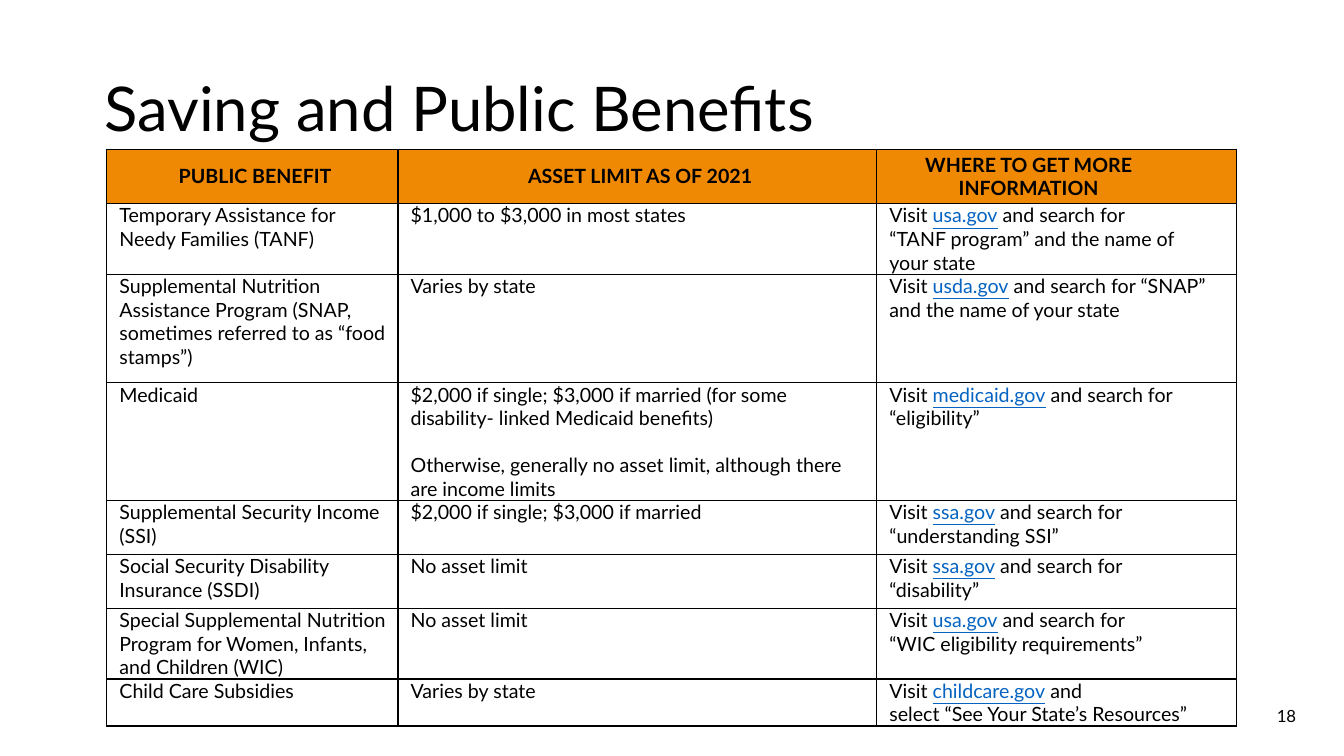
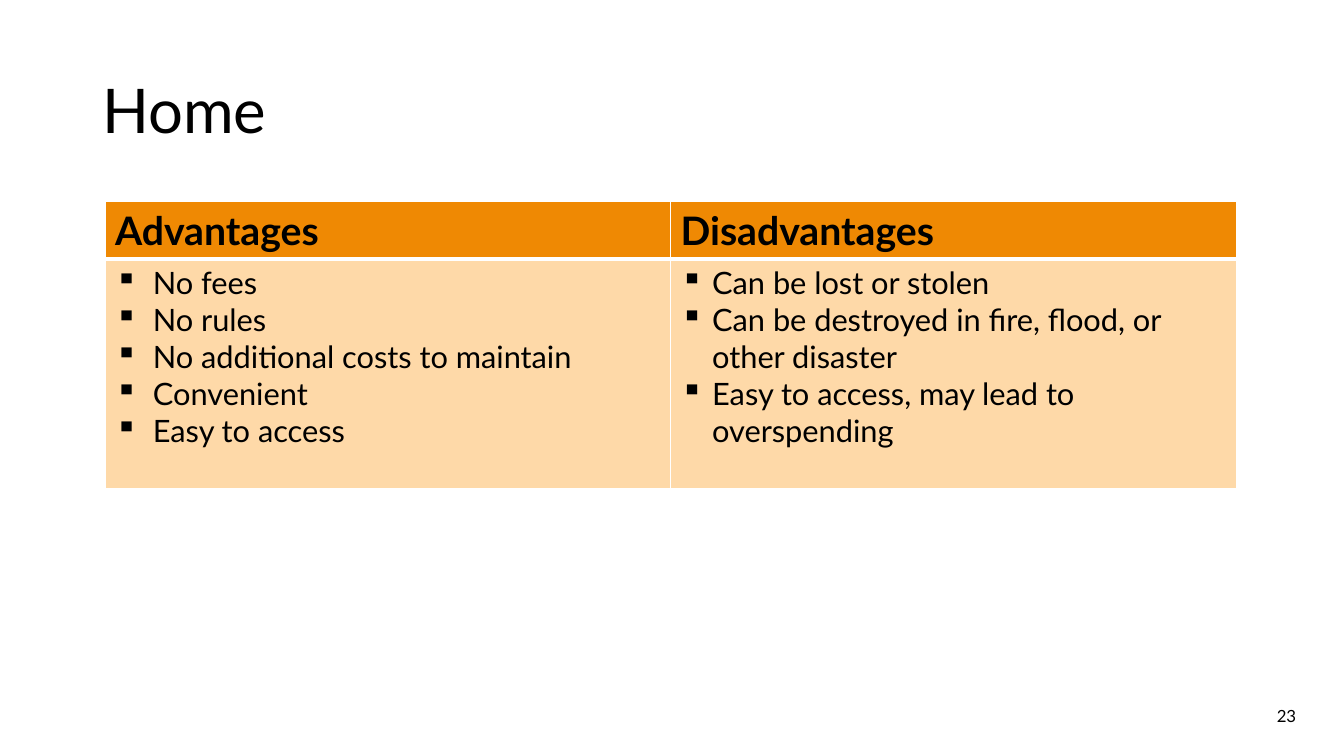
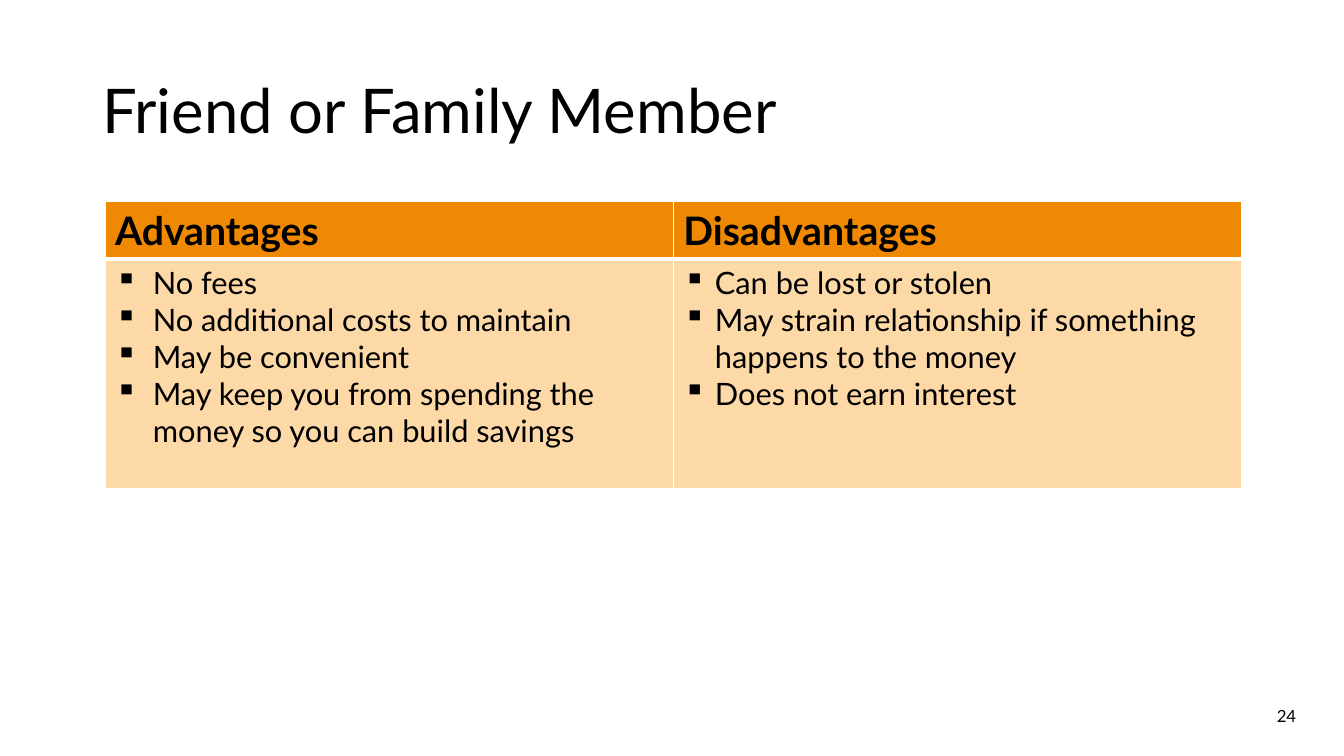
from lxml import etree
from pptx import Presentation
from pptx.dml.color import RGBColor
from pptx.enum.text import MSO_ANCHOR, PP_ALIGN
from pptx.oxml.ns import qn
from pptx.util import Pt

LEFT, CENTER, RIGHT = PP_ALIGN.LEFT, PP_ALIGN.CENTER, PP_ALIGN.RIGHT
TOP, MIDDLE = MSO_ANCHOR.TOP, MSO_ANCHOR.MIDDLE

FONT = "Lato"
COLORS = {
    "text": "000000",
    "link": "0563C1",
    "header": "EF8903",
    "body": "FED9A8",
    "rule": "000000",
    "gap": "FFFFFF",
}

BENEFIT_TITLE = "Saving and Public Benefits"
BENEFIT_HEADERS = ["PUBLIC BENEFIT", "ASSET LIMIT AS OF 2021", "WHERE TO GET MORE INFORMATION"]
BENEFITS = [
    ("Temporary Assistance for Needy Families (TANF)",
     ["$1,000 to $3,000 in most states"],
     "usa.gov", " and search for\n“TANF program” and the name of your state"),
    ("Supplemental Nutrition Assistance Program (SNAP, sometimes referred to as “food stamps”)",
     ["Varies by state"],
     "usda.gov", " and search for “SNAP” and the name of your state"),
    ("Medicaid",
     ["$2,000 if single; $3,000 if married (for some disability- linked Medicaid benefits)",
      "Otherwise, generally no asset limit, although there are income limits"],
     "medicaid.gov", " and search for “eligibility”"),
    ("Supplemental Security Income (SSI)",
     ["$2,000 if single; $3,000 if married"],
     "ssa.gov", " and search for “understanding SSI”"),
    ("Social Security Disability Insurance (SSDI)",
     ["No asset limit"],
     "ssa.gov", " and search for “disability”"),
    ("Special Supplemental Nutrition Program for Women, Infants, and Children (WIC)",
     ["No asset limit"],
     "usa.gov", " and search for\n“WIC eligibility requirements”"),
    ("Child Care Subsidies",
     ["Varies by state"],
     "childcare.gov", " and\nselect “See Your State’s Resources”"),
]
BENEFIT_COLUMNS = [208, 342, 257]
BENEFIT_ROWS = [39, 50, 77.5, 84, 38.5, 38.5, 50.4, 33.6]
BENEFIT_INSETS = (9, 0, 5, 0)
INFO_RIGHT_INSETS = {0: 49, 1: 30, 5: 30}

COMPARISON_HEADERS = ["Advantages", "Disadvantages"]
COMPARISON_ROWS = [41, 164]
COMPARISON_INSETS = (7.2, 3.6, 7.2, 3.6)
BULLET_INDENTS = [27, 22.5]
COMPARISONS = [
    {"title": "Home", "number": 23, "column": 404, "lists": [
        ["No fees", "No rules", "No additional costs to maintain", "Convenient",
         "Easy to access"],
        ["Can be lost or stolen", "Can be destroyed in fire, flood, or other disaster",
         "Easy to access, may lead to overspending"],
    ]},
    {"title": "Friend or Family Member", "number": 24, "column": 406, "lists": [
        ["No fees", "No additional costs to maintain", "May be convenient",
         "May keep you from spending the money so you can build savings"],
        ["Can be lost or stolen", "May strain relationship if something happens to the money",
         "Does not earn interest"],
    ]},
]


def rgb(name):
    return RGBColor.from_string(COLORS[name])


def style(paragraph, size, bold=False, align=LEFT):
    paragraph.alignment = align
    font = paragraph.font
    font.name, font.size, font.bold = FONT, Pt(size), bold
    font.color.rgb = rgb("text")


def add_bullet(paragraph, indent):
    properties = paragraph._p.get_or_add_pPr()
    properties.set("marL", str(Pt(indent)))
    properties.set("indent", str(-Pt(indent)))
    etree.SubElement(properties, qn("a:buChar")).set("char", "▪")


def add_label(page, text, left, top, width, height, size, align=LEFT):
    box = page.shapes.add_textbox(Pt(left), Pt(top), Pt(width), Pt(height))
    frame = box.text_frame
    frame.word_wrap = True
    frame.vertical_anchor = MIDDLE
    paragraph = frame.paragraphs[0]
    paragraph.text = text
    style(paragraph, size, align=align)
    return paragraph


def add_page(deck, title, number, title_left=66, title_top=29):
    page = deck.slides.add_slide(deck.slide_layouts[6])
    heading = add_label(page, title, title_left, title_top, 828, 104.4, 44)
    heading.line_spacing = 0.9
    add_label(page, str(number), 678, 493, 255, 36, 12, RIGHT)
    return page


def add_grid(page, left, top, columns, rows):
    frame = page.shapes.add_table(len(rows), len(columns), Pt(left), Pt(top),
                                  Pt(sum(columns)), Pt(sum(rows)))
    table = frame.table
    table.first_row = table.horz_banding = False
    for column, width in zip(table.columns, columns):
        column.width = Pt(width)
    for row, height in zip(table.rows, rows):
        row.height = Pt(height)
    return table


def format_cell(cell, insets, fill, line, anchor=TOP, top_line=1, bottom_line=1):
    cell.margin_left, cell.margin_top, cell.margin_right, cell.margin_bottom = map(Pt, insets)
    cell.vertical_anchor = anchor
    if fill:
        cell.fill.solid()
        cell.fill.fore_color.rgb = rgb(fill)
    else:
        cell.fill.background()
    properties = cell._tc.get_or_add_tcPr()
    widths = {"a:lnL": 1, "a:lnR": 1, "a:lnT": top_line, "a:lnB": bottom_line}
    for position, (tag, width) in enumerate(widths.items()):
        border = etree.Element(qn(tag), w=str(Pt(width)))
        solid = etree.SubElement(border, qn("a:solidFill"))
        etree.SubElement(solid, qn("a:srgbClr")).set("val", COLORS[line])
        properties.insert(position, border)


def write_lines(cell, lines, size, bold=False, align=LEFT, gap=0, indent=None):
    frame = cell.text_frame
    for index, line in enumerate(lines):
        paragraph = frame.add_paragraph() if index else frame.paragraphs[0]
        paragraph.text = line
        if index and gap:
            paragraph.space_before = Pt(gap)
        if indent:
            add_bullet(paragraph, indent)
        style(paragraph, size, bold, align)


def write_link(cell, address, rest):
    paragraph = cell.text_frame.paragraphs[0]
    style(paragraph, 14)
    paragraph.add_run().text = "Visit "
    link = paragraph.add_run()
    link.text = address
    link.font.underline = True
    link.font.color.rgb = rgb("link")
    for index, line in enumerate(rest.split("\n")):
        if index:
            paragraph.add_line_break()
        paragraph.add_run().text = line


def build_benefits(deck):
    page = add_page(deck, BENEFIT_TITLE, 18, 67.5, 27.5)
    table = add_grid(page, 76.3, 106.5, BENEFIT_COLUMNS, BENEFIT_ROWS)
    for column, header in enumerate(BENEFIT_HEADERS):
        write_lines(table.cell(0, column), [header], 14, True, CENTER)
    for row, (benefit, limits, address, rest) in enumerate(BENEFITS, 1):
        write_lines(table.cell(row, 0), [benefit], 14)
        write_lines(table.cell(row, 1), limits, 14, gap=16.8)
        write_link(table.cell(row, 2), address, rest)
    left, top, right, bottom = BENEFIT_INSETS
    for row in range(len(BENEFIT_ROWS)):
        fill, anchor = (None, TOP) if row else ("header", MIDDLE)
        for column in range(len(BENEFIT_COLUMNS)):
            inset = INFO_RIGHT_INSETS.get(row, right) if column == 2 else right
            format_cell(table.cell(row, column), (left, top, inset, bottom), fill, "rule", anchor)


def build_comparison(deck, comparison):
    page = add_page(deck, comparison["title"], comparison["number"])
    table = add_grid(page, 75, 144, [comparison["column"]] * 2, COMPARISON_ROWS)
    columns = zip(COMPARISON_HEADERS, comparison["lists"], BULLET_INDENTS)
    for column, (header, points, indent) in enumerate(columns):
        head, body = table.cell(0, column), table.cell(1, column)
        write_lines(head, [header], 28, True)
        write_lines(body, points, 22, indent=indent)
        format_cell(head, COMPARISON_INSETS, "header", "gap", bottom_line=3)
        format_cell(body, COMPARISON_INSETS, "body", "gap", top_line=3)


def main():
    deck = Presentation()
    deck.slide_width, deck.slide_height = Pt(960), Pt(540)
    build_benefits(deck)
    for comparison in COMPARISONS:
        build_comparison(deck, comparison)
    deck.save("out.pptx")


if __name__ == "__main__":
    main()
